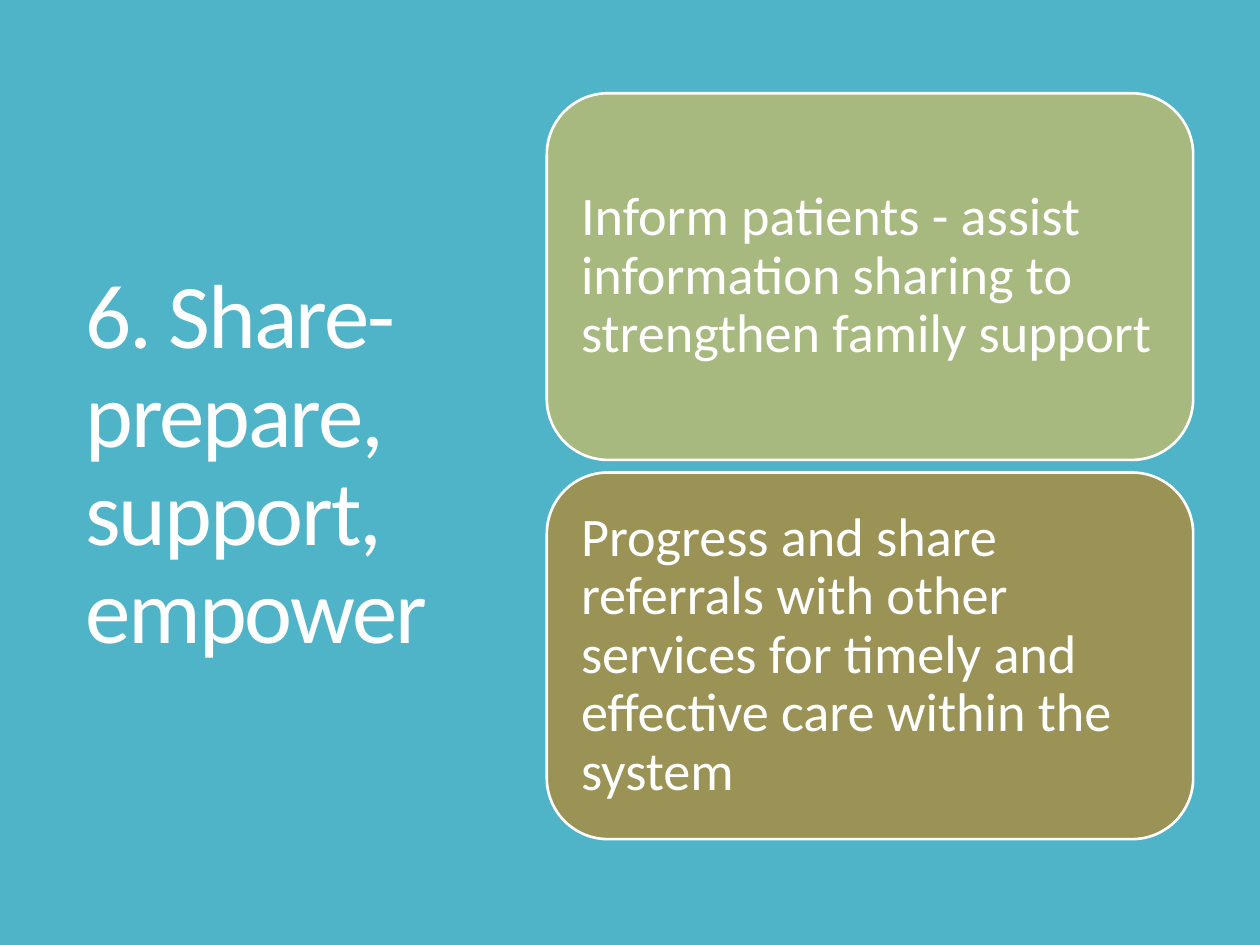
from dataclasses import dataclass

from pptx import Presentation
from pptx.dml.color import RGBColor
from pptx.enum.shapes import MSO_SHAPE
from pptx.enum.text import MSO_ANCHOR, PP_ALIGN
from pptx.util import Inches, Pt

ROUNDED = MSO_SHAPE.ROUNDED_RECTANGLE
MIDDLE = MSO_ANCHOR.MIDDLE
LEFT = PP_ALIGN.LEFT


@dataclass(frozen=True)
class Theme:
    font: str = "Calibri"
    background: RGBColor = RGBColor(0x50, 0xB4, 0xC8)
    white: RGBColor = RGBColor(0xFF, 0xFF, 0xFF)
    green: RGBColor = RGBColor(0xA8, 0xB9, 0x7F)
    olive: RGBColor = RGBColor(0x9B, 0x92, 0x56)
    title_size: int = 52
    card_size: int = 31


THEME = Theme()
TITLE = "6. Share- prepare, support, empower"
CARDS = [
    ("Inform patients - assist information sharing to strengthen family support",
     THEME.green),
    ("Progress and share referrals with other services for timely and "
     "effective care within the system", THEME.olive),
]
CARD_LEFT, CARD_TOP = 4.34, 0.74
CARD_WIDTH, CARD_HEIGHT = 5.13, 2.91
CARD_GAP = 0.1
CARD_INSET = Inches(0.13)


def write_text(tf, text, size):
    """Fill a frame with one left-aligned paragraph, centred vertically."""
    tf.word_wrap = True
    tf.vertical_anchor = MIDDLE
    p = tf.paragraphs[0]
    p.alignment = LEFT
    p.line_spacing = 0.9
    r = p.add_run()
    r.text = text
    p.font.name = THEME.font
    p.font.size = Pt(size)
    p.font.color.rgb = THEME.white
    return r


def add_title(s, text):
    sp = s.shapes.add_textbox(Inches(0.58), Inches(0.7), Inches(3.28), Inches(6.01))
    r = write_text(sp.text_frame, text, THEME.title_size)
    r.font._element.set("spc", "-120")


def add_card(s, top, text, fill):
    sp = s.shapes.add_shape(ROUNDED, Inches(CARD_LEFT), Inches(top),
                            Inches(CARD_WIDTH), Inches(CARD_HEIGHT))
    sp.shadow.inherit = False
    sp.fill.solid()
    sp.fill.fore_color.rgb = fill
    sp.line.color.rgb = THEME.white
    sp.line.width = Pt(1.5)
    tf = sp.text_frame
    tf.margin_left = tf.margin_right = CARD_INSET
    tf.margin_top = tf.margin_bottom = CARD_INSET
    write_text(tf, text, THEME.card_size)


def main():
    prs = Presentation()
    prs.slide_width, prs.slide_height = Inches(10), Inches(7.5)
    s = prs.slides.add_slide(prs.slide_layouts[6])
    s.background.fill.solid()
    s.background.fill.fore_color.rgb = THEME.background
    add_title(s, TITLE)
    for i, (text, fill) in enumerate(CARDS):
        add_card(s, CARD_TOP + i * (CARD_HEIGHT + CARD_GAP), text, fill)
    prs.save("out.pptx")


if __name__ == "__main__":
    main()
